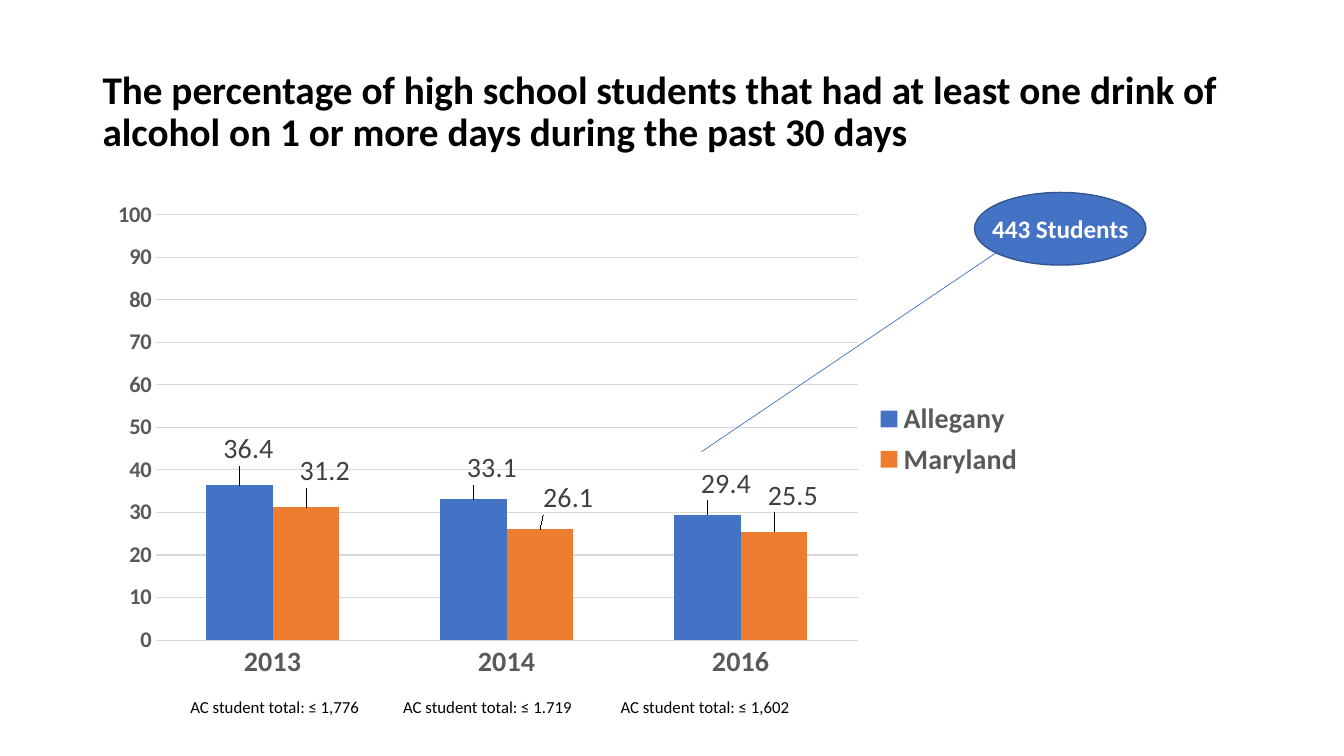
from dataclasses import dataclass
from lxml.etree import SubElement as Sub
from pptx import Presentation as Deck
from pptx.chart.data import CategoryChartData as Data
from pptx.dml.color import RGBColor as RGB
from pptx.enum.chart import XL_CHART_TYPE as Kind, XL_LABEL_POSITION as Spot
from pptx.enum.chart import XL_LEGEND_POSITION as Side, XL_TICK_MARK as Tick
from pptx.enum.shapes import MSO_CONNECTOR as Wire, MSO_SHAPE as Form
from pptx.enum.text import MSO_ANCHOR as Anchor, PP_ALIGN as Align
from pptx.oxml.ns import qn
from pptx.util import Cm, Pt


@dataclass(frozen=True)
class Theme:
    face: str = "Calibri"
    ink: str = "000000"
    pale: str = "FFFFFF"
    gray: str = "595959"
    dark: str = "404040"
    grid: str = "D9D9D9"
    blue: str = "4472C4"
    edge: str = "325491"
    rust: str = "ED7D31"
    head: int = 28
    big: int = 20
    call: int = 18
    tick: int = 16
    note: int = 12


def style(font, size, color, bold=False):
    font.name = Theme.face
    font.size = Pt(size)
    font.bold = bold
    font.color.rgb = RGB.from_string(color)


def write(frame, text, size, color, bold=False, align=Align.LEFT,
          anchor=Anchor.TOP, space=1.0):
    frame.word_wrap = True
    frame.vertical_anchor = anchor
    para = frame.paragraphs[0]
    para.alignment = align
    para.line_spacing = space
    run = para.add_run()
    run.text = text
    style(run.font, size, color, bold)


def layout(host, **parts):
    node = Sub(host, qn("c:layout"))
    box = Sub(node, qn("c:manualLayout"))
    for tag, value in parts.items():
        Sub(box, qn(f"c:{tag}")).set("val", str(value))
    return node


class Page:
    def __init__(self, deck, theme):
        self.theme = theme
        self.slide = deck.slides.add_slide(deck.slide_layouts[5])
        self.shapes = self.slide.shapes

    def title(self, text, box):
        shape = self.shapes.title
        shape.left, shape.top, shape.width, shape.height = map(Cm, box)
        write(shape.text_frame, text, self.theme.head, self.theme.ink,
              bold=True, anchor=Anchor.MIDDLE, space=0.9)

    def label(self, text, box, size, color, **form):
        shape = self.shapes.add_textbox(*map(Cm, box))
        write(shape.text_frame, text, size, color, **form)

    def line(self, start, end):
        wire = self.shapes.add_connector(Wire.STRAIGHT, *map(Cm, start + end))
        wire.line.color.rgb = RGB.from_string(self.theme.blue)
        wire.line.width = Pt(0.5)
        Sub(wire._element.spPr, qn("a:effectLst"))

    def oval(self, box):
        shape = self.shapes.add_shape(Form.OVAL, *map(Cm, box))
        shape.shadow.inherit = False
        shape.fill.solid()
        shape.fill.fore_color.rgb = RGB.from_string(self.theme.blue)
        shape.line.color.rgb = RGB.from_string(self.theme.edge)
        shape.line.width = Pt(1)

    def chart(self, years, rows, box):
        look = self.theme
        data = Data()
        data.categories = years
        for name, values, _, _ in rows:
            data.add_series(name, values)
        frame = self.shapes.add_chart(Kind.COLUMN_CLUSTERED, *map(Cm, box), data)
        chart = frame.chart
        style(chart.font, 10, look.ink)
        chart.has_title = False
        chart.has_legend = True
        chart.legend.position = Side.RIGHT
        chart.legend.include_in_layout = False
        style(chart.legend.font, look.big, look.gray, bold=True)
        for axis, size in ((chart.category_axis, look.big),
                           (chart.value_axis, look.tick)):
            axis.major_tick_mark = axis.minor_tick_mark = Tick.NONE
            axis.format.line.fill.background()
            style(axis.tick_labels.font, size, look.gray, bold=True)
        scale = chart.value_axis
        scale.minimum_scale, scale.maximum_scale = 0, 100
        scale.major_unit = 10
        scale.has_major_gridlines = True
        rule = scale.major_gridlines.format.line
        rule.color.rgb = RGB.from_string(look.grid)
        rule.width = Pt(0.75)
        plot = chart.plots[0]
        plot.gap_width, plot.overlap = 150, 0
        plot.vary_by_categories = False
        for series, (_, _, color, shifts) in zip(plot.series, rows):
            self.bars(series, color, shifts)
        area = chart._chartSpace.chart.plotArea
        for old in area.findall(qn("c:layout")):
            area.remove(old)
        area.insert(0, layout(area, layoutTarget="inner", xMode="edge",
                              yMode="edge", x=0.067, y=0.056, w=0.745, h=0.842))

    def bars(self, series, color, shifts):
        look = self.theme
        series.format.fill.solid()
        series.format.fill.fore_color.rgb = RGB.from_string(color)
        series.data_labels.show_value = True
        style(series.data_labels.font, look.big, look.dark)
        for spot in range(len(shifts)):
            tag = series.points[spot].data_label
            style(tag.font, look.big, look.dark)
            tag.position = Spot.OUTSIDE_END
        for node, (x, y) in zip(series._element.iter(qn("c:dLbl")), shifts):
            node.insert(1, layout(node, x=x, y=y))


def main():
    look = Theme()
    deck = Deck()
    deck.slide_width, deck.slide_height = Cm(33.87), Cm(19.05)
    page = Page(deck, look)
    page.title("The percentage of high school students that had at least one "
               "drink of alcohol on 1 or more days during the past 30 days",
               (2.33, 1.01, 29.21, 3.68))
    rows = (
        ("Allegany", (36.4, 33.1, 29.4), look.blue,
         ((0.01, -0.03), (0.02, -0.02), (0.02, -0.02))),
        ("Maryland", (31.2, 26.1, 25.5), look.rust,
         ((0.02, -0.03), (0.03, -0.02), (0.02, -0.03))),
    )
    page.chart(("2013", "2014", "2016"), rows, (2.33, 4.7, 23.75, 12.73))
    page.line((17.68, 11.38), (25.25, 6.27))
    page.oval((24.56, 4.85, 4.32, 1.83))
    page.label("443 Students", (24.56, 5.26, 4.32, 1.02), look.call, look.pale,
               bold=True, align=Align.CENTER)
    for left, total in ((4.55, "1,776"), (9.91, "1.719"), (15.39, "1,602")):
        page.label(f"AC student total: ≤ {total}", (left, 17.42, 4.88, 0.77),
                   look.note, look.ink)
    deck.save("out.pptx")


if __name__ == "__main__":
    main()
